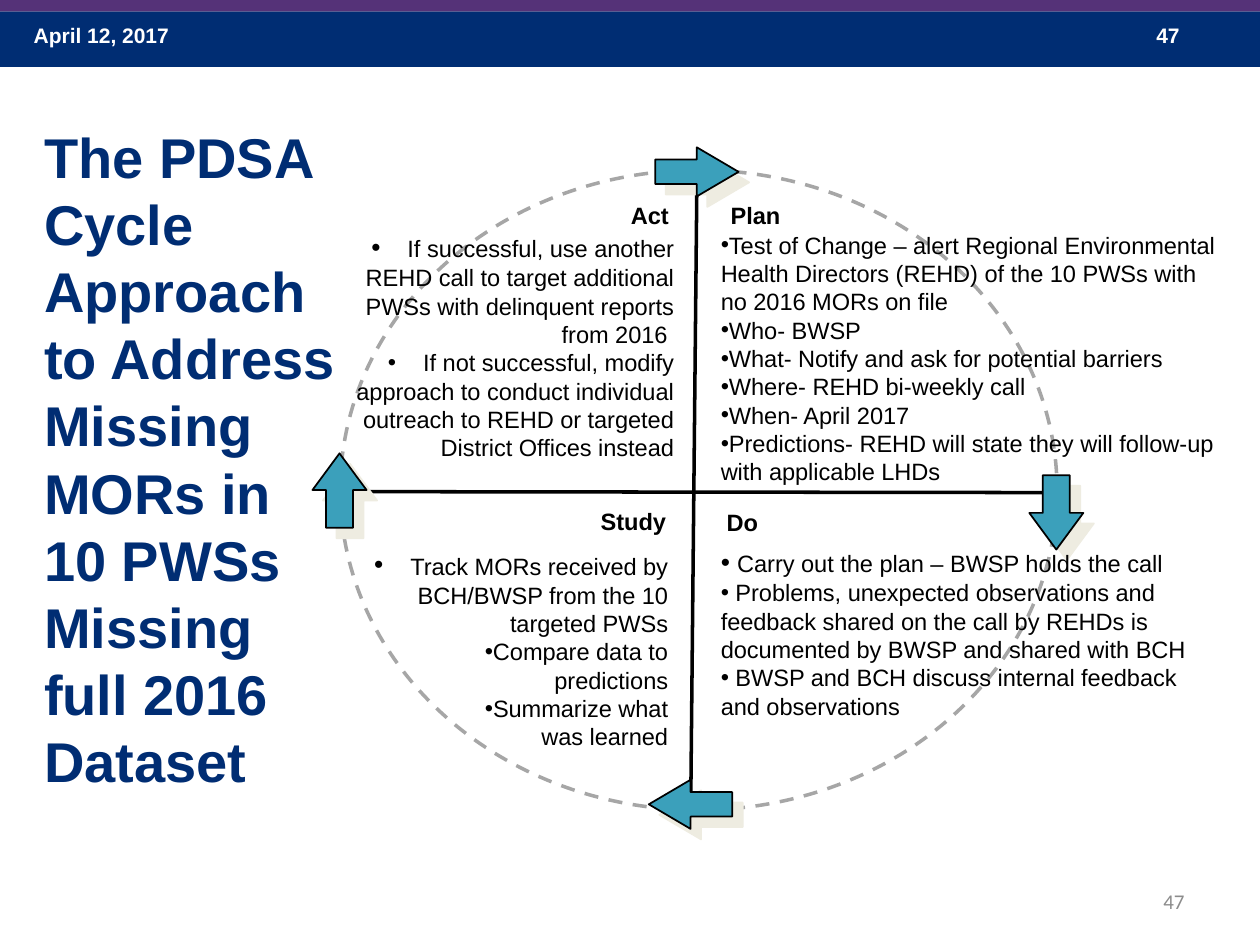
from lxml import etree
from pptx import Presentation
from pptx.dml.color import RGBColor
from pptx.enum.dml import MSO_LINE
from pptx.enum.shapes import MSO_CONNECTOR, MSO_SHAPE
from pptx.enum.text import MSO_ANCHOR, MSO_AUTO_SIZE, PP_ALIGN
from pptx.oxml.ns import qn
from pptx.util import Cm, Pt

LEFT, RIGHT = PP_ALIGN.LEFT, PP_ALIGN.RIGHT
TOP, MIDDLE = MSO_ANCHOR.TOP, MSO_ANCHOR.MIDDLE
RECT, OVAL = MSO_SHAPE.RECTANGLE, MSO_SHAPE.OVAL

THEME = {
    "navy": "002D73", "purple": "553278", "teal": "3BA0BB", "white": "FFFFFF",
    "black": "000000", "dash": "A6A6A6", "shadow": "EEECE1", "grey": "8C8C8C",
    "title": 32, "body": 13.5, "lead": 15, "small": 12,
    "font": "Arial", "number_font": "Calibri",
}


def color(name):
    return RGBColor.from_string(THEME[name])


def write(sp, paragraphs, size="body", fill="black", font="font", bold=False,
          align=LEFT, anchor=TOP, wrap=True, inset=(0.2, 0.1), bullet=False):
    """Each paragraph is (text, options); options: lead, level, indent, bullet."""
    tf = sp.text_frame
    tf.auto_size = MSO_AUTO_SIZE.NONE
    tf.word_wrap, tf.vertical_anchor = wrap, anchor
    tf.margin_left = tf.margin_right = Cm(inset[0])
    tf.margin_top = tf.margin_bottom = Cm(inset[1])
    for i, (text, opt) in enumerate(paragraphs):
        p = tf.paragraphs[0] if i == 0 else tf.add_paragraph()
        p.alignment, p.level = align, opt.get("level", 0)
        p.space_before = p.space_after = Pt(0)
        margin, first = opt.get("indent", (0, 0))
        pPr = p._p.get_or_add_pPr()
        pPr.set("marL", str(Cm(margin)))
        pPr.set("indent", str(Cm(first)))
        if opt.get("bullet", bullet):
            etree.SubElement(pPr, qn("a:buFont"), typeface="Arial")
            etree.SubElement(pPr, qn("a:buChar"), char="•")
        else:
            etree.SubElement(pPr, qn("a:buNone"))
        lead = [(" ", "lead")] if opt.get("lead") else []
        for part, part_size in lead + [(text, size)]:
            r = p.add_run()
            r.text = part
            r.font.name, r.font.size = THEME[font], Pt(THEME[part_size])
            r.font.bold, r.font.color.rgb = bold, color(fill)


prs = Presentation()
prs.slide_width, prs.slide_height = Cm(25.4), Cm(19.05)
s = prs.slides.add_slide(prs.slide_layouts[4])
title, *bodies = list(s.placeholders)[:5]

# Header bands
for y, h, fill in [(0.23, 1.12, "navy"), (-0.08, 0.31, "purple")]:
    sp = s.shapes.add_shape(RECT, 0, Cm(y), Cm(25.4), Cm(h))
    sp.shadow.inherit = False
    sp.fill.solid()
    sp.fill.fore_color.rgb = color(fill)
    sp.line.fill.background()

# Date and slide numbers
small = {"size": "small", "inset": (0.25, 0.13)}
head = {**small, "fill": "white", "bold": True}
foot = {**small, "fill": "grey", "font": "number_font",
        "align": RIGHT, "anchor": MIDDLE}
for text, x, y, w, style in [("April 12, 2017", 0.43, 0.33, 5.92, head),
                             ("47", 23.06, 0.33, 1.91, head),
                             ("47", 18.21, 17.65, 5.92, foot)]:
    sp = s.shapes.add_textbox(Cm(x), Cm(y), Cm(w), Cm(1.02))
    write(sp, [(text, {})], **style)

# Dashed cycle
sp = s.shapes.add_shape(OVAL, Cm(6.86), Cm(3.43), Cm(14.45), Cm(12.9))
sp.shadow.inherit = False
sp.fill.solid()
sp.fill.fore_color.rgb = color("white")
sp.line.color.rgb = color("dash")
sp.line.width = Pt(2)
sp.line.dash_style = MSO_LINE.DASH

# Quadrant axes
for x1, y1, x2, y2 in [(14.05, 3.51, 13.92, 16.66), (6.81, 9.91, 21.34, 9.93)]:
    ln = s.shapes.add_connector(MSO_CONNECTOR.STRAIGHT, Cm(x1), Cm(y1), Cm(x2), Cm(y2))
    ln.line.color.rgb = color("black")
    ln.line.width = Pt(2)
    etree.SubElement(ln._element.spPr, qn("a:effectLst"))

# Cycle arrows with an offset shadow
across, upright = (1.68, 0.99, 0.851), (1.09, 1.5, 0.678)
for shape, x, y, (w, h, point) in [(MSO_SHAPE.RIGHT_ARROW, 13.21, 2.97, across),
                                   (MSO_SHAPE.LEFT_ARROW, 13.08, 15.72, across),
                                   (MSO_SHAPE.DOWN_ARROW, 20.75, 9.58, upright),
                                   (MSO_SHAPE.UP_ARROW, 6.3, 9.14, upright)]:
    sp = s.shapes.add_shape(shape, Cm(x), Cm(y), Cm(w), Cm(h))
    sp.adjustments[0], sp.adjustments[1] = 0.5, point
    sp.fill.solid()
    sp.fill.fore_color.rgb = color("teal")
    sp.line.color.rgb = color("black")
    sp.line.width = Pt(1)
    effects = etree.SubElement(sp._element.spPr, qn("a:effectLst"))
    shadow = etree.SubElement(effects, qn("a:outerShdw"), blurRad="0",
                              dist=str(Pt(8.5)), dir=str(45 * 60000),
                              algn="ctr", rotWithShape="0")
    etree.SubElement(shadow, qn("a:srgbClr"), val=THEME["shadow"])

# Title
title.left, title.top, title.width, title.height = Cm(0.69), Cm(2.36), Cm(6.3), Cm(13.87)
write(title, [("The PDSA Cycle Approach to Address Missing MORs in 10 PWSs "
               "Missing full 2016 Dataset", {})], size="title", fill="navy", bold=True)

# Quadrants: heading with its box, list box, alignment, items
hang = {"indent": (0, -0.58)}
second = {"level": 1, "indent": (0.33, 0.28)}
third = {"level": 2, "indent": (0.94, 0.28)}
quadrants = [
    ("Act", (12.52, 3.96, 1.17), (6.68, 4.57, 7.11, 4.88), RIGHT, [
        ("If successful, use another REHD call to target additional PWSs with "
         "delinquent reports from 2016 ", {**hang, "lead": True}),
        (" If not successful, modify approach to conduct individual outreach to "
         "REHD or targeted District Offices instead", hang)]),
    ("Plan", (14.53, 3.96, 1.4), (14.33, 4.55, 10.62, 5.38), LEFT, [
        ("Test of Change – alert Regional Environmental Health Directors (REHD) "
         "of the 10 PWSs with no 2016 MORs on file", {}),
        ("Who- BWSP", {}),
        ("What- Notify and ask for potential barriers", {}),
        ("Where- REHD bi-weekly call", {}),
        ("When- April 2017", {}),
        ("Predictions- REHD will state they will follow-up with applicable LHDs", {})]),
    ("Study", (11.91, 10.11, 1.73), (6.86, 10.97, 6.81, 4.29), RIGHT, [
        ("Track MORs received by BCH/BWSP from the 10 targeted PWSs",
         {**hang, "lead": True}),
        ("Compare data to", second),
        ("predictions", {"bullet": False}),
        ("Summarize what", third),
        ("was learned", {**third, "bullet": False})]),
    ("Do", (14.45, 10.13, 1.02), (14.33, 10.92, 9.93, 3.71), LEFT, [
        ("Carry out the plan – BWSP holds the call", {"lead": True}),
        (" Problems, unexpected observations and feedback shared on the call by "
         "REHDs is documented by BWSP and shared with BCH", {}),
        (" BWSP and BCH discuss internal feedback and observations", {})]),
]
for body, (name, (x, y, w), box, align, items) in zip(bodies, quadrants):
    sp = s.shapes.add_textbox(Cm(x), Cm(y), Cm(w), Cm(0.76))
    write(sp, [(name, {})], bold=True, wrap=False)
    body.left, body.top, body.width, body.height = [Cm(v) for v in box]
    write(body, items, align=align, bullet=True)
    s.shapes._spTree.append(body._element)  # lists lie in front of the cycle

prs.save("out.pptx")
